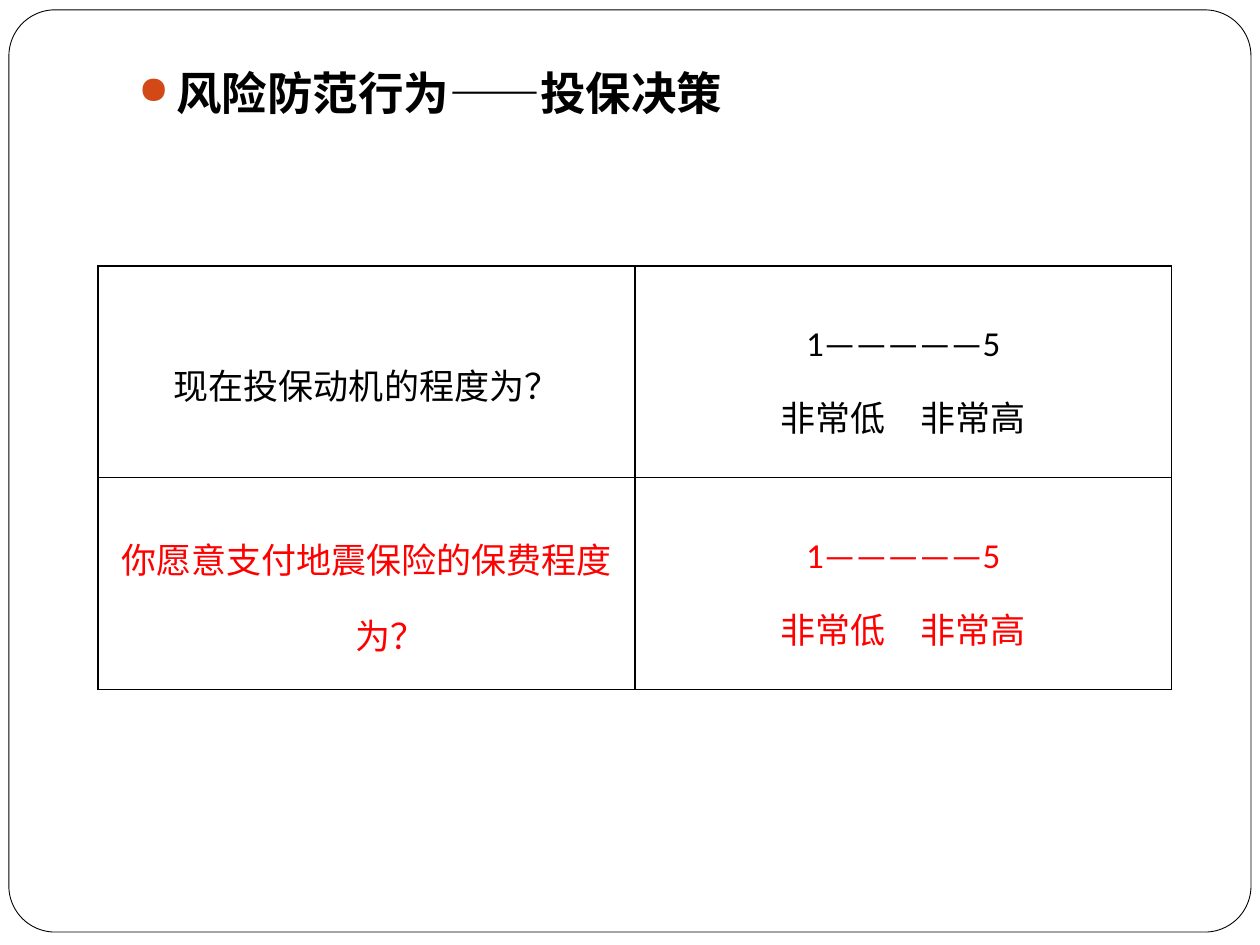
import pptx
import pptx.dml.color
import pptx.enum.shapes
import pptx.enum.text
import pptx.oxml
import pptx.oxml.ns
import pptx.util
from pptx.util import Cm

COLORS = {"paper": "FFFFFF", "ink": "000000", "accent": "FF0000", "bullet": "D34817"}

TITLE = "风险防范行为——投保决策"
SCALE = ["1—————5", "非常低　非常高"]
QUESTIONS = [
    ("现在投保动机的程度为？", "ink"),
    ("你愿意支付地震保险的保费程度为？", "accent"),
]

COLUMN_WIDTH, ROW_HEIGHT = Cm(10.82), Cm(4.27)
CELL_MARGIN = Cm(0.18)


def rgb(name):
    return pptx.dml.color.RGBColor.from_string(COLORS[name])


def append_xml(parent, xml):
    namespace = pptx.oxml.ns.nsdecls("a")
    parent.append(pptx.oxml.parse_xml(xml.replace(" ", f" {namespace} ", 1)))


def write(paragraph, text, size=20, font="Calibri", color="ink", bold=False,
          align=None, line_spacing=None, space_before=None, hanging=None):
    run = paragraph.add_run()
    run.text = text
    run.font.size = pptx.util.Pt(size)
    run.font.name = font
    run.font.bold = bold
    run.font.color.rgb = rgb(color)
    paragraph.alignment = align
    paragraph.line_spacing = line_spacing
    paragraph.space_before = space_before
    if hanging:
        properties = paragraph._p.get_or_add_pPr()
        properties.set("marL", str(hanging))
        properties.set("indent", str(-hanging))


def add_bullet(paragraph):
    properties = paragraph._p.get_or_add_pPr()
    append_xml(properties, f'<a:buClr ><a:srgbClr val="{COLORS["bullet"]}"/></a:buClr>')
    append_xml(properties, '<a:buSzPct val="85000"/>')
    append_xml(properties, '<a:buChar char="●"/>')


def add_frame(slide):
    frame = slide.shapes.add_shape(
        pptx.enum.shapes.MSO_SHAPE.ROUNDED_RECTANGLE,
        Cm(0.18), Cm(0.2), Cm(25.04), Cm(18.59))
    frame.adjustments[0] = 0.05
    frame.shadow.inherit = False
    frame.fill.solid()
    frame.fill.fore_color.rgb = rgb("paper")
    frame.line.color.rgb = rgb("ink")
    frame.line.width = pptx.util.Pt(0.5)


def add_title(slide):
    box = slide.shapes.add_textbox(Cm(2.54), Cm(1.19), Cm(21.59), Cm(1.6))
    box.text_frame.word_wrap = True
    paragraph = box.text_frame.paragraphs[0]
    write(paragraph, TITLE, size=26, font="Times New Roman", bold=True,
          space_before=pptx.util.Pt(5.8), hanging=Cm(0.76))
    add_bullet(paragraph)


def fill_cell(cell, lines, color, hanging=None):
    cell.margin_left = cell.margin_right = CELL_MARGIN
    cell.margin_top = cell.margin_bottom = 0
    cell.vertical_anchor = pptx.enum.text.MSO_ANCHOR.MIDDLE
    for side in "LRTB":
        append_xml(cell._tc.get_or_add_tcPr(),
                   f'<a:ln{side} w="12700"><a:solidFill>'
                   f'<a:srgbClr val="{COLORS["ink"]}"/></a:solidFill></a:ln{side}>')
    cell.fill.background()
    for index, line in enumerate(lines):
        frame = cell.text_frame
        paragraph = frame.add_paragraph() if index else frame.paragraphs[0]
        write(paragraph, line, color=color, line_spacing=1.5, hanging=hanging,
              align=pptx.enum.text.PP_ALIGN.CENTER)


def add_questions(slide):
    count = len(QUESTIONS)
    table = slide.shapes.add_table(count, 2, Cm(1.98), Cm(5.36),
                                   2 * COLUMN_WIDTH, count * ROW_HEIGHT).table
    table.first_row = table.horz_banding = False
    for column in table.columns:
        column.width = COLUMN_WIDTH
    for index, (question, color) in enumerate(QUESTIONS):
        table.rows[index].height = ROW_HEIGHT
        fill_cell(table.cell(index, 0), [question], color, hanging=Cm(0.97))
        fill_cell(table.cell(index, 1), SCALE, color)


def main():
    presentation = pptx.Presentation()
    presentation.slide_width, presentation.slide_height = Cm(25.4), Cm(19.05)
    slide = presentation.slides.add_slide(presentation.slide_layouts[6])
    add_frame(slide)
    add_title(slide)
    add_questions(slide)
    presentation.save("out.pptx")


if __name__ == "__main__":
    main()
